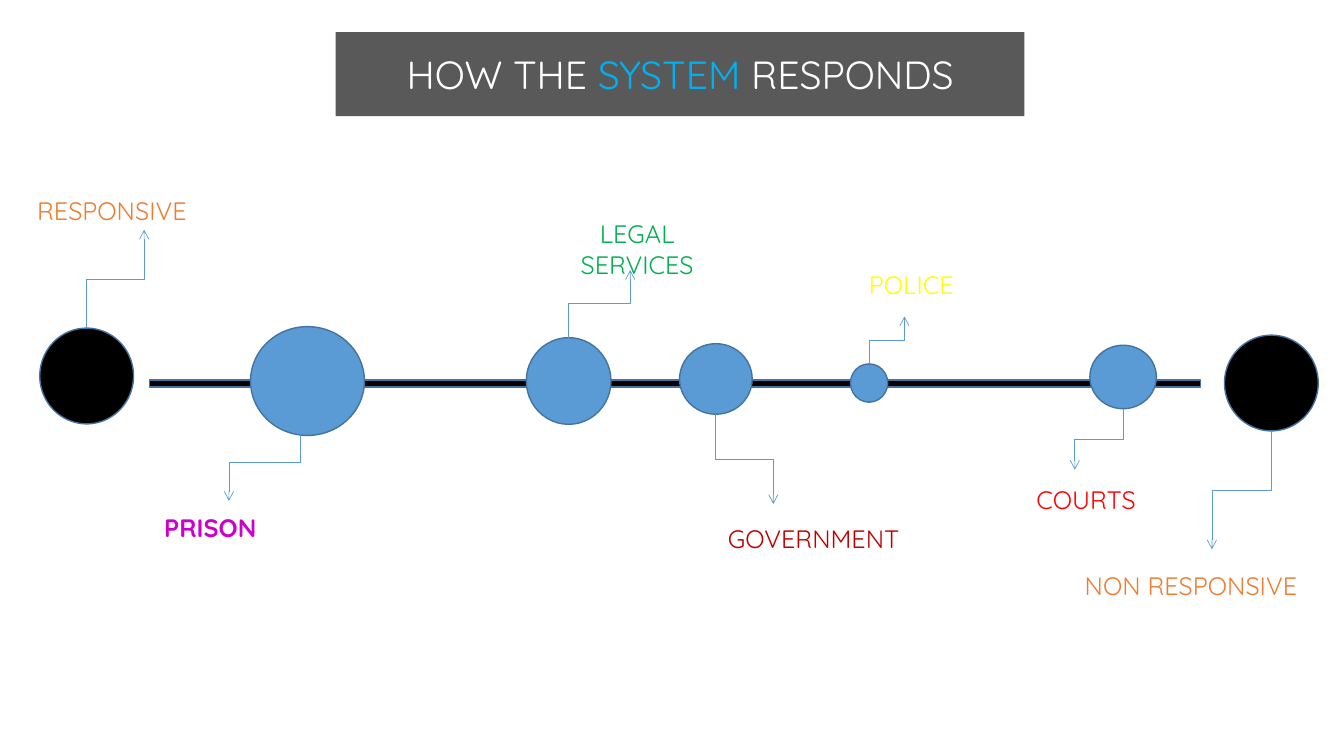
from collections import namedtuple

from lxml.etree import SubElement
from pptx import Presentation
from pptx.dml.color import RGBColor
from pptx.enum.shapes import MSO_CONNECTOR, MSO_SHAPE
from pptx.enum.text import MSO_ANCHOR, MSO_AUTO_SIZE, PP_ALIGN
from pptx.oxml.ns import qn
from pptx.util import Inches, Pt

COLORS = {
    "banner": "595959", "white": "FFFFFF", "accent": "00B0F0",
    "black": "000000", "blue": "5B9BD5", "outline": "43739E",
    "orange": "ED7D31", "purple": "CC00CC", "green": "00B050",
    "crimson": "C00000", "yellow": "FFFF00", "red": "FF0000",
}
FONT = "Quicksand"

# x runs from the left of the timeline box, y from its axis;
# circle is centre x, centre y, width, height; label is left, top, width, height
Stage = namedtuple("Stage", "name color fill circle tip label start", defaults=[None])
STAGES = [
    Stage("RESPONSIVE", "orange", "black", (0.86, -0.07, 0.93, 0.95),
          (1.43, -1.52), (0.27, -1.91, 1.94, 0.4)),
    Stage("NON RESPONSIVE", "orange", "black", (12.61, 0, 0.93, 0.95),
          (12.02, 1.65), (10.66, 1.81, 2.67, 0.4)),
    Stage("PRISON", "purple", "blue", (3.05, -0.02, 1.13, 1.08),
          (2.27, 1.17), (1.53, 1.23, 1.29, 0.4), (2.98, 0.41)),
    Stage("LEGAL SERVICES", "green", "blue", (5.64, -0.02, 0.84, 0.86),
          (6.25, -1.12), (5.53, -1.68, 1.58, 0.71)),
    Stage("GOVERNMENT", "crimson", "blue", (7.1, -0.04, 0.72, 0.7),
          (7.67, 1.2), (7.12, 1.34, 2.11, 0.4)),
    Stage("POLICE", "yellow", "blue", (8.62, 0, 0.37, 0.38),
          (8.97, -0.66), (8.52, -1.18, 1.24, 0.4)),
    Stage("COURTS", "red", "blue", (11.14, -0.06, 0.66, 0.63),
          (10.66, 0.86), (10.18, 0.96, 1.35, 0.4)),
]


def rgb(name):
    return RGBColor.from_string(COLORS[name])


def add_run(p, text, color, **font):
    r = p.add_run()
    r.text = text
    for key, value in {"name": FONT, **font}.items():
        setattr(r.font, key, value)
    r.font.color.rgb = rgb(color)


def add_solid(s, kind, box, fill):
    sp = s.shapes.add_shape(kind, *map(Inches, box))
    sp.shadow.inherit = False
    sp.fill.solid()
    sp.fill.fore_color.rgb = rgb(fill)
    sp.line.color.rgb = rgb("outline")
    sp.line.width = Pt(1)


def add_arrow(s, start, tip):
    """Elbow arrow that leaves and arrives vertically: a quarter-turned connector."""
    (x1, y1), (x2, y2) = start, tip
    cx, cy = (x1 + x2) / 2, (y1 + y2) / 2
    turn = -1 if (x2 - x1) * (y2 - y1) > 0 else 1
    dx, dy = turn * (y2 - y1) / 2, -turn * (x2 - x1) / 2
    ends = (cx - dx, cy - dy, cx + dx, cy + dy)
    c = s.shapes.add_connector(MSO_CONNECTOR.ELBOW, *map(Inches, ends))
    c.line.color.rgb = rgb("blue")
    c.line.width = Pt(0.5)
    sp_pr = c._element.spPr
    sp_pr.find(qn("a:xfrm")).set("rot", str(turn * 90 % 360 * 60000))
    SubElement(sp_pr.find(qn("a:ln")), qn("a:tailEnd"), type="arrow")
    SubElement(sp_pr, qn("a:effectLst"))


def add_label(s, text, color, box):
    tf = s.shapes.add_textbox(*map(Inches, box)).text_frame
    tf.word_wrap = True
    tf.auto_size = MSO_AUTO_SIZE.SHAPE_TO_FIT_TEXT
    p = tf.paragraphs[0]
    if text == "LEGAL SERVICES":
        p.alignment = PP_ALIGN.CENTER
    add_run(p, text, color, size=Pt(18), bold=text == "PRISON")


def add_title(s, box):
    sp = s.shapes.title
    for key, value in zip(("left", "top", "width", "height"), box):
        setattr(sp, key, Inches(value))
    sp.fill.solid()
    sp.fill.fore_color.rgb = rgb("banner")
    tf = sp.text_frame
    for key, value in {"word_wrap": True, "vertical_anchor": MSO_ANCHOR.MIDDLE,
                       "auto_size": MSO_AUTO_SIZE.SHAPE_TO_FIT_TEXT}.items():
        setattr(tf, key, value)
    p = tf.paragraphs[0]
    p.alignment = PP_ALIGN.CENTER
    for text, color in (("HOW THE ", "white"), ("SYSTEM", "accent"), (" RESPONDS", "white")):
        add_run(p, text, color, size=Pt(28))


def add_timeline(s, box):
    left, top, width, height = box
    axis = top + height / 2

    # Bar: the minus sign has wide empty margins, so it overhangs the box
    add_solid(s, MSO_SHAPE.MATH_MINUS,
              (left - 0.4, axis - 0.14, width + 0.86, 0.29), "black")

    # Circles, each with an arrow to its label
    for stage in STAGES:
        cx, cy, w, h = stage.circle
        add_solid(s, MSO_SHAPE.FLOWCHART_CONNECTOR,
                  (left + cx - w / 2, axis + cy - h / 2, w, h), stage.fill)
        side = 1 if stage.tip[1] > 0 else -1
        x, y = stage.start or (cx, cy + side * h / 2)
        tip_x, tip_y = stage.tip
        add_arrow(s, (left + x, axis + y), (left + tip_x, axis + tip_y))
        x, y, w, h = stage.label
        add_label(s, stage.name, stage.color, (left + x, axis + y, w, h))


def main():
    prs = Presentation()
    prs.slide_width, prs.slide_height = Inches(13.33), Inches(7.5)
    s = prs.slides.add_slide(prs.slide_layouts[5])
    add_title(s, (3.33, 0.45, 6.83, 0.57))
    add_timeline(s, (0, 1.8, 13.33, 4))
    prs.save("out.pptx")


if __name__ == "__main__":
    main()
